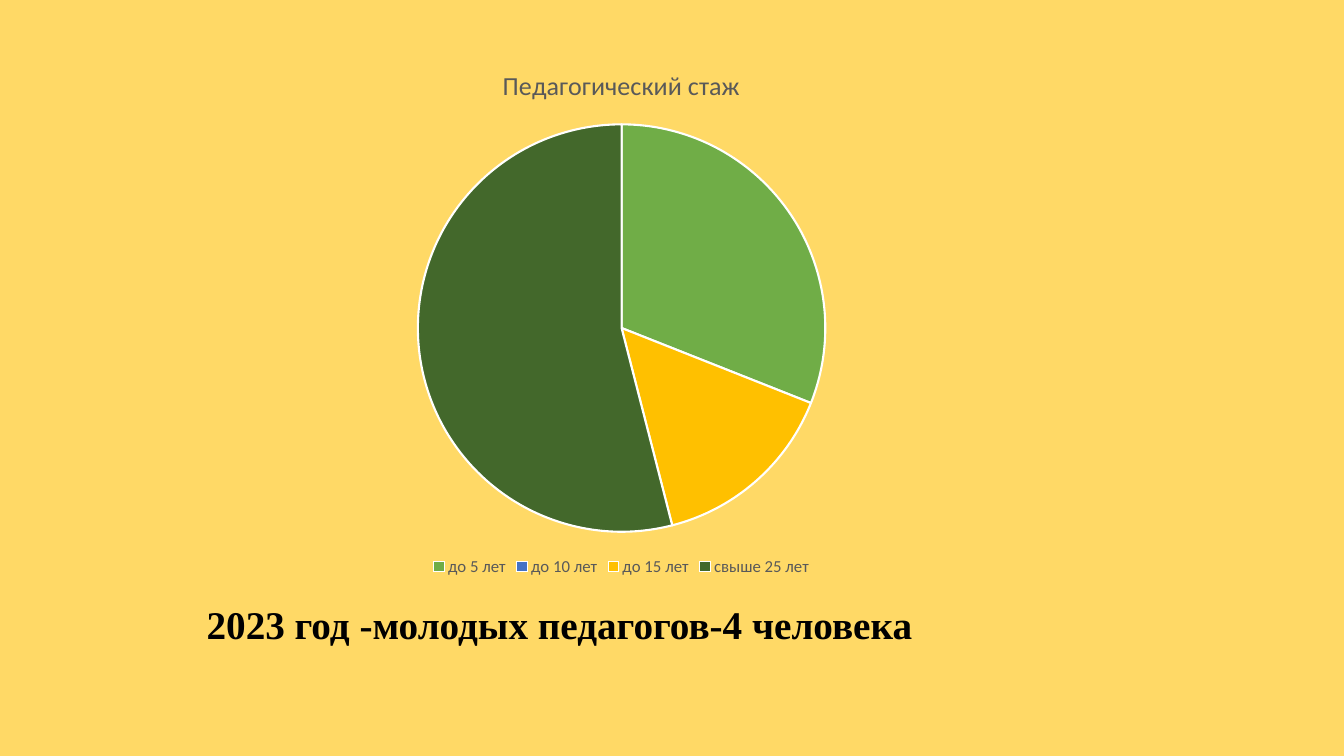
from pptx import Presentation
from pptx.chart import data
from pptx.dml import color
from pptx.enum import chart, text
from pptx.util import Pt

EXPERIENCE = [
    ("до 5 лет", 31, "70AD47"),
    ("до 10 лет", 0, "4472C4"),
    ("до 15 лет", 15, "FFC000"),
    ("свыше 25 лет", 54, "43682B"),
]


def paint(target, hex_color):
    if hasattr(target, "solid"):
        target.solid()
        target = target.fore_color
    target.rgb = color.RGBColor.from_string(hex_color)


def style_font(font, name, size, hex_color, bold=False):
    font.name = name
    font.size = Pt(size)
    font.bold = bold
    paint(font.color, hex_color)


def add_experience_pie(slide, box):
    heading = "Педагогический стаж"
    shares = data.CategoryChartData()
    shares.categories = [label for label, _, _ in EXPERIENCE]
    shares.add_series(heading, [share for _, share, _ in EXPERIENCE])
    pie = slide.shapes.add_chart(
        chart.XL_CHART_TYPE.PIE, *map(Pt, box), shares
    ).chart
    style_font(pie.font, "Calibri", 10, "000000")

    pie.has_title = True
    pie.chart_title.include_in_layout = False
    pie.chart_title.text_frame.text = heading
    title_run = pie.chart_title.text_frame.paragraphs[0].runs[0]
    style_font(title_run.font, "Calibri", 18.6, "595959")

    pie.has_legend = True
    pie.legend.position = chart.XL_LEGEND_POSITION.BOTTOM
    pie.legend.include_in_layout = False
    style_font(pie.legend.font, "Calibri", 12, "595959")

    plot = pie.plots[0]
    plot.vary_by_categories = True
    for index, (_, _, hex_color) in enumerate(EXPERIENCE):
        sector = plot.series[0].points[index].format
        paint(sector.fill, hex_color)
        paint(sector.line.fill, "FFFFFF")
        sector.line.width = Pt(1.5)


def add_young_teachers(slide, box):
    frame = slide.shapes.add_textbox(*map(Pt, box)).text_frame
    frame.word_wrap = True
    frame.auto_size = text.MSO_AUTO_SIZE.SHAPE_TO_FIT_TEXT
    frame.text = "2023 год -молодых педагогов-4 человека"
    run = frame.paragraphs[0].runs[0]
    style_font(run.font, "Times New Roman", 28, "000000", bold=True)


def main():
    deck = Presentation()
    deck.slide_width, deck.slide_height = Pt(960), Pt(540)
    slide = deck.slides.add_slide(deck.slide_layouts[6])
    paint(slide.background.fill, "FFD966")
    add_experience_pie(slide, (96, 33, 696, 382))
    add_young_teachers(slide, (140.5, 425, 622, 41))
    deck.save("out.pptx")


if __name__ == "__main__":
    main()
